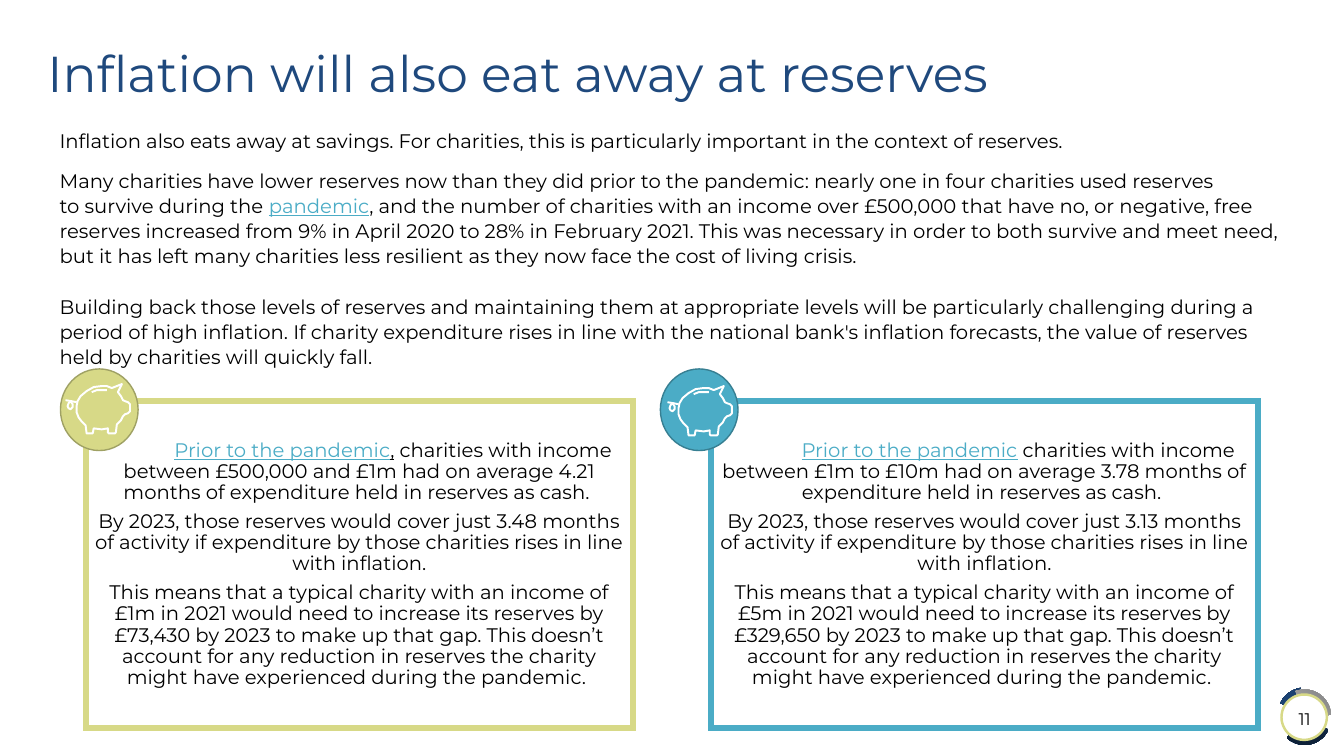
from dataclasses import dataclass

from lxml import etree
from pptx import Presentation, util as u
from pptx.dml.color import RGBColor
from pptx.enum import shapes, text
from pptx.oxml import ns

FONT = "Montserrat"
NAVY, DEEP, BLACK, WHITE = "1F497D", "0E2138", "000000", "FFFFFF"
LIME, TEAL = "D7D987", "4BACC6"
FIXED_SPACE = chr(160)
Span = tuple[str, str, bool]


@dataclass
class Paragraph:
    spans: list[Span]
    formats: dict


@dataclass
class Card:
    left: float
    colour: str
    rim: str
    badge_left: float
    pig_left: float
    pig_top: float
    paragraphs: list[list[Span]]


@dataclass
class Arc:
    box: tuple[float, float, float, float]
    rotation: float
    start: float
    stops: tuple[str, str]


def plain(words: str) -> Span:
    return words, BLACK, False


def link(words: str) -> Span:
    return words, TEAL, True


def apply(target, formats: dict) -> None:
    for name, value in formats.items():
        setattr(target, name, value)


def paint(colour_format, colour: str) -> None:
    colour_format.rgb = RGBColor.from_string(colour)


def place(shape, left: float, top: float, width: float, height: float) -> None:
    sides = dict(left=left, top=top, width=width, height=height)
    apply(shape, {side: u.Inches(length) for side, length in sides.items()})


def write(frame, paragraphs: list[Paragraph], size: float, anchor, inset: float = 0.1) -> None:
    apply(frame, dict(word_wrap=True, auto_size=text.MSO_AUTO_SIZE.NONE, vertical_anchor=anchor,
                      margin_left=u.Inches(inset), margin_right=u.Inches(inset),
                      margin_top=u.Inches(0.05), margin_bottom=u.Inches(0.05)))
    for index, content in enumerate(paragraphs):
        paragraph = frame.paragraphs[0] if index == 0 else frame.add_paragraph()
        apply(paragraph, content.formats)
        for words, colour, underlined in content.spans:
            run = paragraph.add_run()
            run.text = words
            apply(run.font, dict(name=FONT, size=u.Pt(size), underline=underlined))
            paint(run.font.color, colour)


def indent(paragraph, first_line: float) -> None:
    properties = paragraph._p.get_or_add_pPr()
    properties.set("marL", "0")
    properties.set("indent", str(u.Inches(first_line)))


def add_outlined(slide, kind, box: tuple, fill: str, line: str, weight: float):
    shape = slide.shapes.add_shape(kind, *map(u.Inches, box))
    shape.shadow.inherit = False
    shape.fill.solid()
    paint(shape.fill.fore_color, fill)
    paint(shape.line.color, line)
    shape.line.width = u.Pt(weight)
    etree.SubElement(shape.line._get_or_add_ln(), ns.qn("a:miter"), lim="800000")
    return shape


def add_arc(slide, arc: Arc) -> None:
    pie = slide.shapes.add_shape(shapes.MSO_SHAPE.PIE, *map(u.Inches, arc.box))
    pie.shadow.inherit = False
    pie.rotation = arc.rotation
    pie.adjustments[0], pie.adjustments[1] = arc.start, 79.94
    pie.line.fill.background()
    pie.fill.gradient()
    pie.fill.gradient_angle = 270
    for stop, position, colour in zip(pie.fill.gradient_stops, (0, 0.87), arc.stops):
        stop.position = position
        paint(stop.color, colour)


BODY_OUTLINE = [
    (65, 22), (65, 29), (63, 31), (60, 32), (58, 34), (56, 38), (52, 42), (51, 50), (50, 51),
    (44, 51), (43, 50), (43, 46), (37, 47), (29, 46), (28, 51), (22, 51), (21, 43), (17, 39),
    (14, 35), (12, 30), (12, 24), (13, 19), (16, 14), (22, 9), (29, 5), (37, 4), (42, 4),
    (47, 6), (57, 2), (53, 10), (56, 14), (58, 18), (60, 19), (63, 20)]
TAIL = [(1, 18), (7, 19), (12, 20)]
TAIL_CURL = [(6, 19), (4, 21), (3, 24), (4, 26), (6, 27), (8, 25), (8, 22)]
BACK_CREASE = [(27, 10), (32, 8), (37, 8), (42, 8)]
PIG = [(BODY_OUTLINE, True), (TAIL, False), (TAIL_CURL, True), (BACK_CREASE, False)]


def add_pig(slide, left: float, top: float) -> None:
    for points, closed in PIG:
        moved = [(left * 100 + x, top * 100 + y) for x, y in points]
        builder = slide.shapes.build_freeform(*moved[0], scale=u.Inches(0.01))
        builder.add_line_segments(moved[1:], close=closed)
        stroke = builder.convert_to_shape()
        stroke.shadow.inherit = False
        stroke.fill.background()
        paint(stroke.line.color, WHITE)
        stroke.line.width = u.Pt(1.4)


def add_card(slide, card: Card) -> None:
    panel = add_outlined(slide, shapes.MSO_SHAPE.RECTANGLE, (card.left, 3.98, 5.43, 3.24),
                         WHITE, card.colour, 4.5)
    formats = dict(alignment=text.PP_ALIGN.CENTER, line_spacing=0.9, space_after=u.Pt(5.5))
    write(panel.text_frame, [Paragraph(spans, formats) for spans in card.paragraphs],
          14, text.MSO_ANCHOR.MIDDLE, 0.06)
    indent(panel.text_frame.paragraphs[0], 0.67)
    add_outlined(slide, shapes.MSO_SHAPE.OVAL, (card.badge_left, 3.66, 0.77, 0.81),
                 card.colour, card.rim, 1)
    add_pig(slide, card.pig_left, card.pig_top)


def card_paragraphs(opening: list[Span], months: str, income: str, gap: str) -> list[list[Span]]:
    return [
        opening,
        [plain(f"By 2023, those reserves would cover just {months} months of activity if "
               "expenditure by those charities rises in line with inflation.")],
        [plain(f"This means that a typical charity with an income of {income} in 2021 would need "
               f"to increase its reserves by {gap} by 2023 to make up that gap. This doesn’t "
               "account for any reduction in reserves the charity might have experienced during "
               "the pandemic. ")]]


ARCS = [
    Arc((12.68, 6.87, 0.52, 0.52), 0, 14.78, (NAVY, DEEP)),
    Arc((12.67, 6.82, 0.55, 0.55), 126.6, 47.46, (DEEP, NAVY)),
    Arc((12.68, 6.84, 0.52, 0.52), 225.1, 14.78, ("D9D9D9", "808080"))]

LOOSE = dict(line_spacing=1.07, space_before=u.Pt(10), space_after=u.Pt(8))
INTRODUCTION = [
    Paragraph([plain("Inflation also eats away at savings. For charities, this is particularly "
                     "important in the context of reserves.")],
              dict(line_spacing=0.9, space_before=u.Pt(10))),
    Paragraph([plain("Many charities have lower reserves now than they did prior to the pandemic: "
                     "nearly one in four charities used reserves "
                     f"to{FIXED_SPACE}survive during the "),
               link("pandemic"),
               plain(", and the number of charities with an income over £500,000 that have no, or "
                     "negative, free reserves increased from 9% in April 2020 to 28% in February "
                     f"2021. This was necessary{FIXED_SPACE}in order to both survive and meet "
                     "need, but it has left many charities less resilient as they now face the "
                     "cost of living crisis.")], LOOSE),
    Paragraph([plain("Building back those levels of reserves and maintaining them at appropriate "
                     "levels will be particularly challenging during a period of high inflation. "
                     "If charity expenditure rises in line with the national bank's inflation "
                     "forecasts, the value of reserves held by charities will quickly fall.")],
              LOOSE)]

CARDS = [
    Card(0.85, LIME, "9FA164", 0.6, 0.64, 3.79, card_paragraphs(
        [link("Prior to the pandemic"), (",", BLACK, True),
         plain(" charities with income between £500,000 and £1m had on average 4.21 months of "
               "expenditure held in reserves as cash. ")], "3.48", "£1m", "£73,430")),
    Card(7.05, TEAL, "377F92", 6.55, 6.61, 3.81, card_paragraphs(
        [link("Prior to the pandemic"),
         plain(" charities with income between £1m to £10m had on average 3.78 months of "
               "expenditure held in reserves as cash. ")], "3.13", "£5m", "£329,650"))]


def main() -> None:
    deck = Presentation()
    apply(deck, dict(slide_width=u.Inches(13.33), slide_height=u.Inches(7.5)))
    slide = deck.slides.add_slide(deck.slide_layouts[1])

    headline, introduction = slide.placeholders
    place(headline, 0.37, 0.27, 12.36, 0.98)
    write(headline.text_frame,
          [Paragraph([("Inflation will also eat away at reserves", NAVY, False)],
                     dict(alignment=text.PP_ALIGN.LEFT, line_spacing=0.9))],
          36, text.MSO_ANCHOR.MIDDLE)

    place(introduction, 0.49, 1.26, 12.36, 5.61)
    write(introduction.text_frame, INTRODUCTION, 14, text.MSO_ANCHOR.TOP)
    for paragraph in introduction.text_frame.paragraphs:
        indent(paragraph, 0)
        etree.SubElement(paragraph._p.get_or_add_pPr(), ns.qn("a:buNone"))

    for card in CARDS:
        add_card(slide, card)

    for arc in ARCS:
        add_arc(slide, arc)
    add_outlined(slide, shapes.MSO_SHAPE.OVAL, (12.71, 6.89, 0.45, 0.45), WHITE, LIME, 1.75)
    page_number = slide.shapes.add_textbox(*map(u.Inches, (12.68, 6.93, 0.52, 0.4)))
    write(page_number.text_frame,
          [Paragraph([plain("11")], dict(alignment=text.PP_ALIGN.CENTER))],
          12, text.MSO_ANCHOR.MIDDLE)

    deck.save("out.pptx")


if __name__ == "__main__":
    main()
